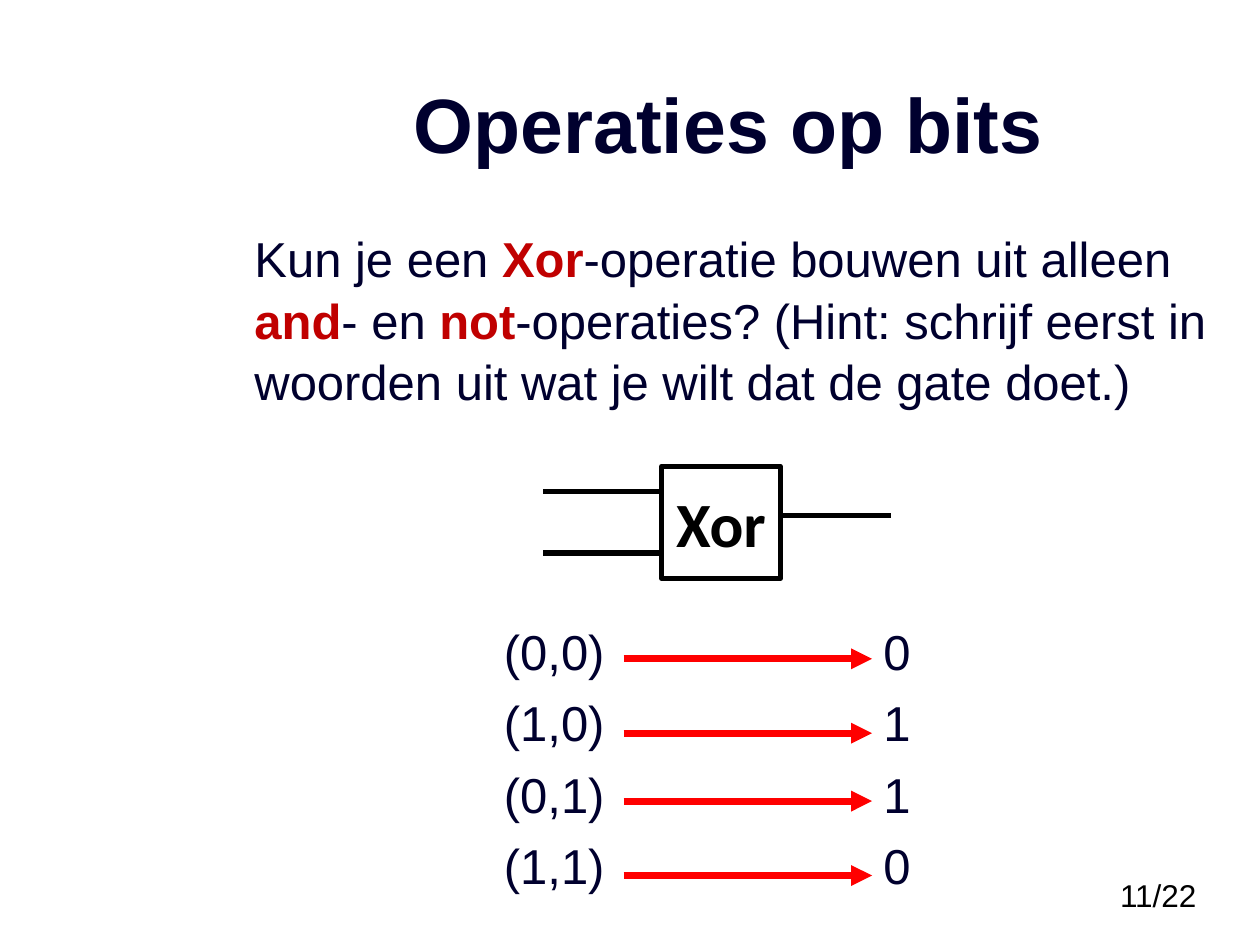
"""Build a slide on making an Xor gate, with its diagram and truth table."""
from lxml.etree import SubElement
from pptx import Presentation
from pptx.dml.color import RGBColor
from pptx.enum.shapes import MSO_CONNECTOR, MSO_SHAPE
from pptx.enum.text import MSO_ANCHOR as ANCHOR, PP_ALIGN as ALIGN
from pptx.oxml.ns import qn
from pptx.util import Cm, Pt

COLORS = {"navy": "00002E", "red": "C00000", "arrow": "FF0000",
          "black": "000000", "white": "FFFFFF"}

TITLE = "Operaties op bits"
QUESTION = [("Kun je een ", False), ("Xor", True),
            ("-operatie bouwen uit alleen ", False), ("and", True),
            ("- en ", False), ("not", True),
            ("-operaties? (Hint: schrijf eerst in woorden uit "
             "wat je wilt dat de gate doet.)", False)]
TRUTH = [("(0,0)", "0", 13.28), ("(1,0)", "1", 14.78),
         ("(0,1)", "1", 16.15), ("(1,1)", "0", 17.65)]
WIRES = [(10.95, 13.34, 9.91), (10.95, 13.34, 11.15), (15.57, 17.96, 10.39)]
ARROW_X = (12.57, 17.58)
RESULT_TAB = 7.65

HEADING = {"size": Pt(44), "bold": True, "name": "Arial"}
BODY = {"size": Pt(28), "bold": False, "name": "Arial"}
KEYWORD = {**BODY, "bold": True}
GATE = {"size": Pt(36), "bold": True, "name": "Calibri"}
PAGE = {"size": Pt(18), "bold": False, "name": "Arial"}
ROW = {"line_spacing": 1.05, "space_before": Pt(5.6)}


def rgb(name):
    return RGBColor.from_string(COLORS[name])


def set_all(obj, values):
    for key, value in values.items():
        setattr(obj, key, value)


def add_run(p, text, fmt, color):
    r = p.add_run()
    r.text = text
    set_all(r.font, fmt)
    r.font.color.rgb = rgb(color)


def add_box(s, box, anchor=ANCHOR.TOP):
    tf = s.shapes.add_textbox(*map(Cm, box)).text_frame
    set_all(tf, {"word_wrap": True, "vertical_anchor": anchor})
    return tf


def add_line(s, x1, x2, y, color, width, arrow=False):
    sp = s.shapes.add_connector(MSO_CONNECTOR.STRAIGHT, Cm(x1), Cm(y), Cm(x2), Cm(y))
    sp.line.color.rgb = rgb(color)
    sp.line.width = Pt(width)
    if arrow:
        SubElement(sp.line._get_or_add_ln(), qn("a:tailEnd"), type="triangle")
    SubElement(sp._element.spPr, qn("a:effectLst"))


def add_gate(s):
    sp = s.shapes.add_shape(MSO_SHAPE.RECTANGLE, Cm(13.34), Cm(9.4), Cm(2.39), Cm(2.26))
    sp.shadow.inherit = False
    sp.fill.solid()
    sp.fill.fore_color.rgb = rgb("white")
    sp.line.color.rgb = rgb("black")
    sp.line.width = Pt(3)
    tf = sp.text_frame
    set_all(tf, {"word_wrap": False, "vertical_anchor": ANCHOR.MIDDLE})
    p = tf.paragraphs[0]
    p.alignment = ALIGN.CENTER
    add_run(p, "Xor", GATE, "black")


def add_truth_table(s):
    tf = add_box(s, (9.91, 12.34, 9.2, 5.9))
    for i, (bits, result, y) in enumerate(TRUTH):
        p = tf.add_paragraph() if i else tf.paragraphs[0]
        set_all(p, ROW if i else {"line_spacing": 1.05})
        tabs = SubElement(p._p.get_or_add_pPr(), qn("a:tabLst"))
        SubElement(tabs, qn("a:tab"), pos=str(Cm(RESULT_TAB)), algn="l")
        add_run(p, f"{bits}\t{result}", BODY, "navy")
        add_line(s, *ARROW_X, y, "arrow", 4, arrow=True)


def main():
    prs = Presentation()
    set_all(prs, {"slide_width": Cm(25.4), "slide_height": Cm(19.05)})
    s = prs.slides.add_slide(prs.slide_layouts[6])

    p = add_box(s, (22.33, 17.53, 3.07, 1.02)).paragraphs[0]
    add_run(p, "11/22", PAGE, "black")

    p = add_box(s, (4.95, 0.66, 19.48, 3.61), ANCHOR.MIDDLE).paragraphs[0]
    p.alignment = ALIGN.CENTER
    add_run(p, TITLE, HEADING, "navy")

    p = add_box(s, (4.88, 4.42, 19.96, 4.6)).paragraphs[0]
    p.line_spacing = 1.05
    for text, key in QUESTION:
        add_run(p, text, KEYWORD if key else BODY, "red" if key else "navy")

    for wire in WIRES:
        add_line(s, *wire, "black", 3)
    add_gate(s)
    add_truth_table(s)
    prs.save("out.pptx")


if __name__ == "__main__":
    main()
